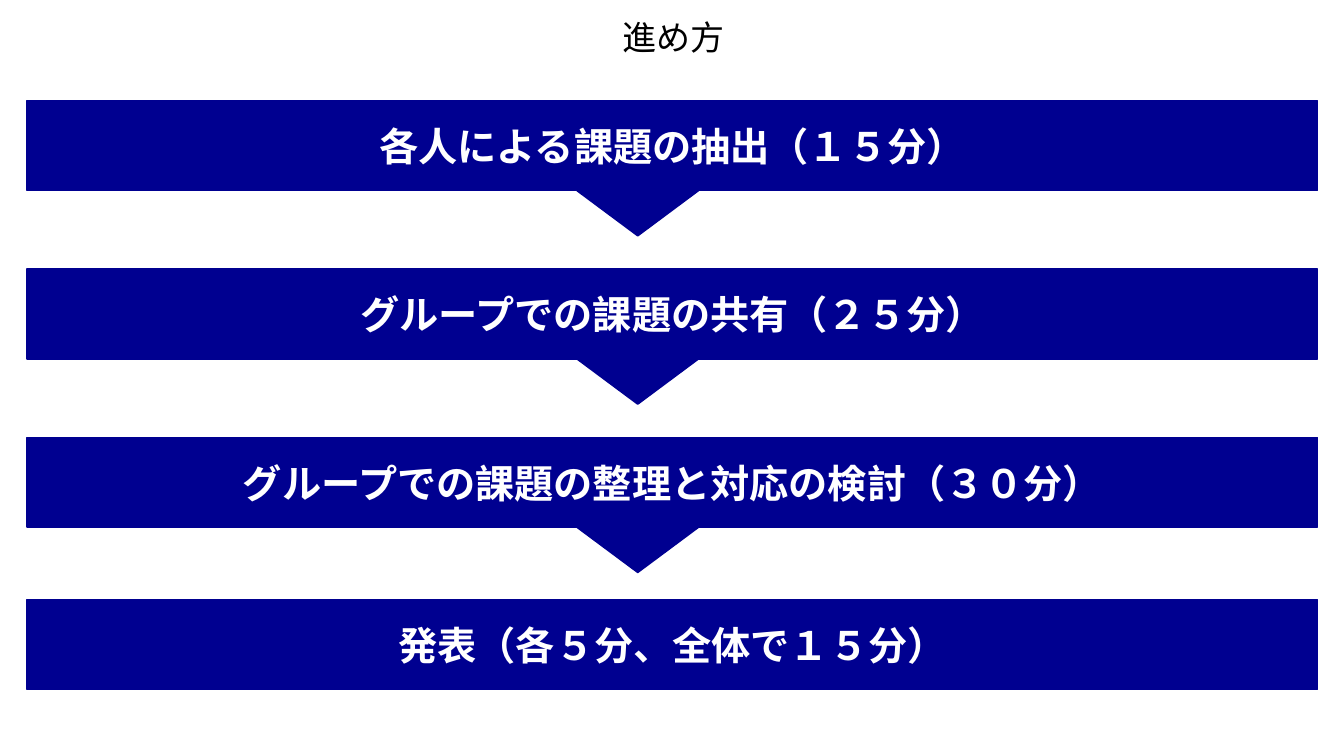
from dataclasses import dataclass

from lxml import etree
from pptx import Presentation
from pptx.dml.color import RGBColor
from pptx.enum.shapes import MSO_SHAPE
from pptx.enum.text import MSO_ANCHOR, PP_ALIGN
from pptx.oxml.ns import qn
from pptx.shapes.autoshape import Shape
from pptx.slide import Slide
from pptx.util import Inches, Pt

RECTANGLE = MSO_SHAPE.RECTANGLE
TRIANGLE = MSO_SHAPE.ISOSCELES_TRIANGLE
CENTER = PP_ALIGN.CENTER
MIDDLE = MSO_ANCHOR.MIDDLE

FONT = "Noto Sans CJK JP"
NAVY, WHITE, BLACK = "000090", "FFFFFF", "000000"
BAR_LEFT, BAR_WIDTH, BAR_HEIGHT = 0.27, 12.8, 0.89
ARROW_LEFT, ARROW_WIDTH, ARROW_HEIGHT = 5.72, 1.21, 0.45


@dataclass(frozen=True)
class Step:
    text: str
    top: float


STEPS = [
    Step("各人による課題の抽出（１５分）", 1),
    Step("グループでの課題の共有（２５分）", 2.67),
    Step("グループでの課題の整理と対応の検討（３０分）", 4.34),
    Step("発表（各５分、全体で１５分）", 5.95),
]


def color(hex_code: str) -> RGBColor:
    return RGBColor.from_string(hex_code)


def write_centered(shape: Shape, text: str, size: float, hex_code: str,
                   bold: bool = False) -> None:
    frame = shape.text_frame
    frame.text = text
    frame.word_wrap = True
    frame.vertical_anchor = MIDDLE
    paragraph = frame.paragraphs[0]
    paragraph.alignment = CENTER
    font = paragraph.runs[0].font
    font.name = FONT
    font.size = Pt(size)
    font.bold = bold
    font.color.rgb = color(hex_code)
    # Japanese glyphs take their typeface from a:ea
    east_asian = etree.SubElement(font._element, qn("a:ea"))
    east_asian.set("typeface", FONT)


def add_navy_shape(slide: Slide, kind: MSO_SHAPE, left: float, top: float,
                   width: float, height: float) -> Shape:
    shape = slide.shapes.add_shape(
        kind, Inches(left), Inches(top), Inches(width), Inches(height))
    shape.shadow.inherit = False
    shape.fill.solid()
    shape.fill.fore_color.rgb = color(NAVY)
    shape.line.color.rgb = color(NAVY)
    shape.line.width = Pt(1)
    return shape


def add_heading(slide: Slide, text: str) -> None:
    heading = slide.shapes.add_textbox(
        Inches(0.93), Inches(0.16), Inches(11.5), Inches(0.46))
    write_centered(heading, text, 24.3, BLACK)
    heading.text_frame.paragraphs[0].line_spacing = 0.9


def add_step_bar(slide: Slide, step: Step) -> None:
    bar = add_navy_shape(slide, RECTANGLE, BAR_LEFT, step.top,
                         BAR_WIDTH, BAR_HEIGHT)
    write_centered(bar, step.text, 28, WHITE, bold=True)


def add_arrow_below(slide: Slide, step: Step) -> None:
    arrow = add_navy_shape(slide, TRIANGLE, ARROW_LEFT, step.top + BAR_HEIGHT,
                           ARROW_WIDTH, ARROW_HEIGHT)
    arrow.rotation = 180


def main() -> None:
    deck = Presentation()
    deck.slide_width = Inches(13.33)
    deck.slide_height = Inches(7.5)
    slide = deck.slides.add_slide(deck.slide_layouts[6])

    add_heading(slide, "進め方")
    for step in STEPS:
        add_step_bar(slide, step)
    for step in STEPS[:-1]:
        add_arrow_below(slide, step)

    deck.save("out.pptx")


if __name__ == "__main__":
    main()
